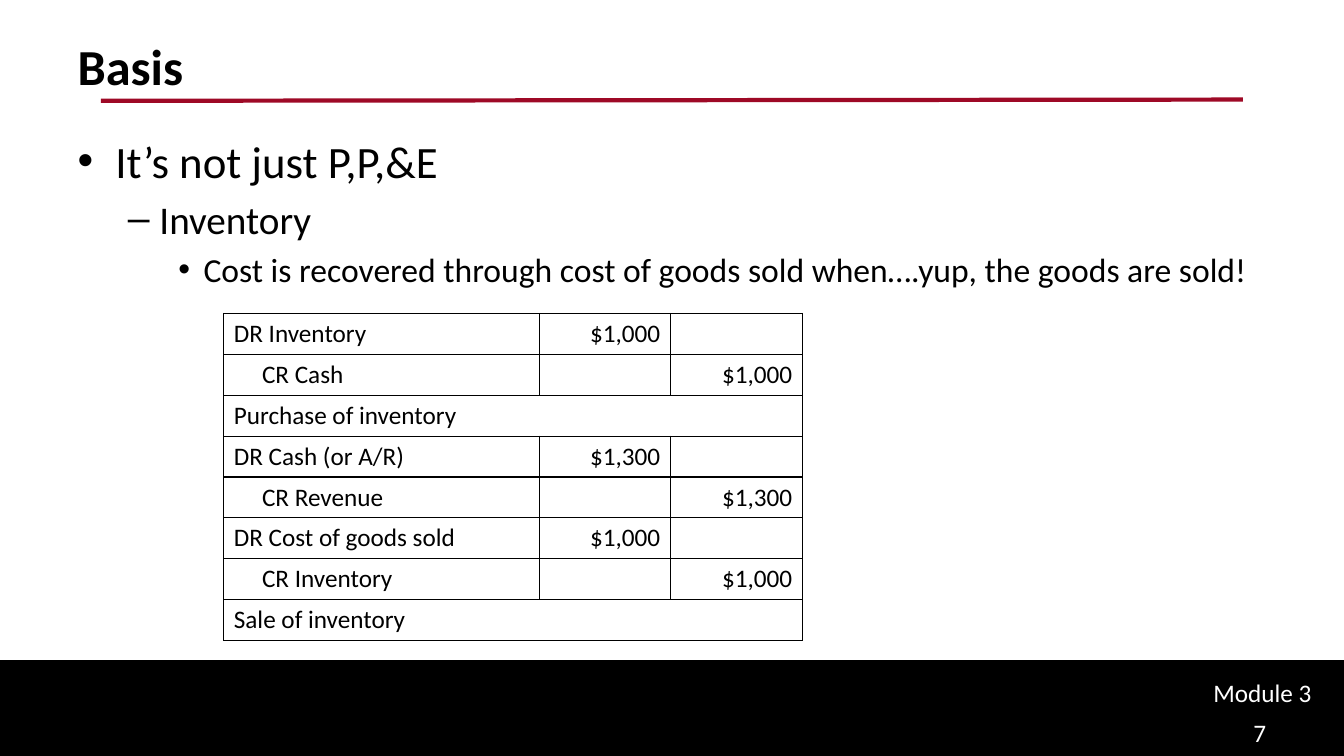
from lxml.etree import SubElement
from pptx import Presentation
from pptx.dml.color import RGBColor
from pptx.enum.shapes import MSO_CONNECTOR, MSO_SHAPE
from pptx.enum.text import MSO_ANCHOR, MSO_AUTO_SIZE, PP_ALIGN
from pptx.oxml.ns import qn
from pptx.util import Cm, Pt

BLACK = RGBColor(0x00, 0x00, 0x00)
WHITE = RGBColor(0xFF, 0xFF, 0xFF)
CRIMSON = RGBColor(0x9E, 0x09, 0x26)
FONT = "Calibri"
DEBIT, CREDIT, CAPTION = "debit", "credit", "caption"

BULLETS = [
    ("It’s not just P,P,&E", 32),
    ("Inventory", 28),
    ("Cost is recovered through cost of goods sold when….yup, the goods are sold!", 24),
]
JOURNAL = [
    (DEBIT, "DR Inventory", "$1,000"),
    (CREDIT, "CR Cash", "$1,000"),
    (CAPTION, "Purchase of inventory", ""),
    (DEBIT, "DR Cash (or A/R)", "$1,300"),
    (CREDIT, "CR Revenue", "$1,300"),
    (DEBIT, "DR Cost of goods sold", "$1,000"),
    (CREDIT, "CR Inventory", "$1,000"),
    (CAPTION, "Sale of inventory", ""),
]
COLUMN_WIDTHS = (Cm(7.95), Cm(3.3), Cm(3.33))
ROW_HEIGHT = Cm(1.03)


def write(para, text, size=18, color=BLACK, bold=False, align=PP_ALIGN.LEFT, indent=None):
    """Put formatted text into a paragraph."""
    span = para.add_run()
    span.text = text
    span.font.name = FONT
    span.font.size = Pt(size)
    span.font.bold = bold
    span.font.color.rgb = color
    para.alignment = align
    if indent is not None:
        para._p.get_or_add_pPr().set("marL", str(indent))


def place(shape, left, top, width, height):
    """Move and size a shape."""
    shape.left, shape.top, shape.width, shape.height = left, top, width, height


def add_footer_band(page, width):
    """Draw the black band at the foot of the slide."""
    band = page.shapes.add_shape(MSO_SHAPE.RECTANGLE, 0, Cm(16.66), width, Cm(2.39))
    band.shadow.inherit = False
    band.fill.solid()
    band.fill.fore_color.rgb = BLACK
    band.line.color.rgb = BLACK
    band.line.width = Pt(2)


def add_title_rule(page):
    """Draw the line below the title."""
    rule = page.shapes.add_connector(
        MSO_CONNECTOR.STRAIGHT, Cm(2.54), Cm(2.54), Cm(31.32), Cm(2.51))
    rule.line.color.rgb = CRIMSON
    rule.line.width = Pt(3)
    SubElement(rule._element.spPr, qn("a:effectLst"))


def fill_title(box, text):
    """Place and format the title."""
    place(box, Cm(1.7), Cm(0.76), Cm(30.48), Cm(3.18))
    frame = box.text_frame
    frame.vertical_anchor = MSO_ANCHOR.TOP
    frame.auto_size = MSO_AUTO_SIZE.NONE
    write(frame.paragraphs[0], text, size=36, bold=True)


def fill_body(box, bullets):
    """Place the list, each item one level deeper than the last."""
    place(box, Cm(1.7), Cm(3.23), Cm(30.48), Cm(12.12))
    frame = box.text_frame
    frame.auto_size = MSO_AUTO_SIZE.NONE
    for level, (text, size) in enumerate(bullets):
        para = frame.add_paragraph() if level else frame.paragraphs[0]
        para.level = level
        para.space_before = Pt(size * 0.2 if level else 0)
        write(para, text, size=size)


def add_label(page, text, left, top, width, height):
    """Add a white footer label."""
    box = page.shapes.add_textbox(left, top, width, height)
    box.text_frame.word_wrap = True
    write(box.text_frame.paragraphs[0], text, color=WHITE)


def outline_cell(cell):
    """Give a cell thin black borders and no fill."""
    properties = cell._tc.get_or_add_tcPr()
    for side in ("lnL", "lnR", "lnT", "lnB"):
        border = SubElement(properties, qn(f"a:{side}"), w=str(Pt(1)))
        paint = SubElement(border, qn("a:solidFill"))
        SubElement(paint, qn("a:srgbClr"), val=str(BLACK))
    cell.fill.background()


def add_journal(page, entries):
    """Add the table of journal entries."""
    table = page.shapes.add_table(
        len(entries), len(COLUMN_WIDTHS), Cm(5.64), Cm(7.9),
        sum(COLUMN_WIDTHS), ROW_HEIGHT * len(entries)).table
    table.first_row = table.horz_banding = False
    for column, width in zip(table.columns, COLUMN_WIDTHS):
        column.width = width
    for cell in table.iter_cells():
        outline_cell(cell)
    for row, (kind, account, amount) in enumerate(entries):
        table.rows[row].height = ROW_HEIGHT
        name = table.cell(row, 0)
        write(name.text_frame.paragraphs[0], account,
              indent=Cm(0.71) if kind == CREDIT else None)
        if kind == CAPTION:
            name.merge(table.cell(row, 2))
        else:
            value = table.cell(row, 1 if kind == DEBIT else 2)
            write(value.text_frame.paragraphs[0], amount, align=PP_ALIGN.RIGHT)


def main():
    """Build and save the slide."""
    deck = Presentation()
    deck.slide_width, deck.slide_height = Cm(33.87), Cm(19.05)
    page = deck.slides.add_slide(deck.slide_layouts[1])
    add_footer_band(page, deck.slide_width)
    add_title_rule(page)
    fill_title(page.shapes.title, "Basis")
    fill_body(page.placeholders[1], BULLETS)
    add_label(page, "Module 3", Cm(30.33), Cm(16.94), Cm(3.35), Cm(1.02))
    add_label(page, "7", Cm(31.34), Cm(17.96), Cm(2.31), Cm(1.09))
    add_journal(page, JOURNAL)
    deck.save("out.pptx")


if __name__ == "__main__":
    main()
